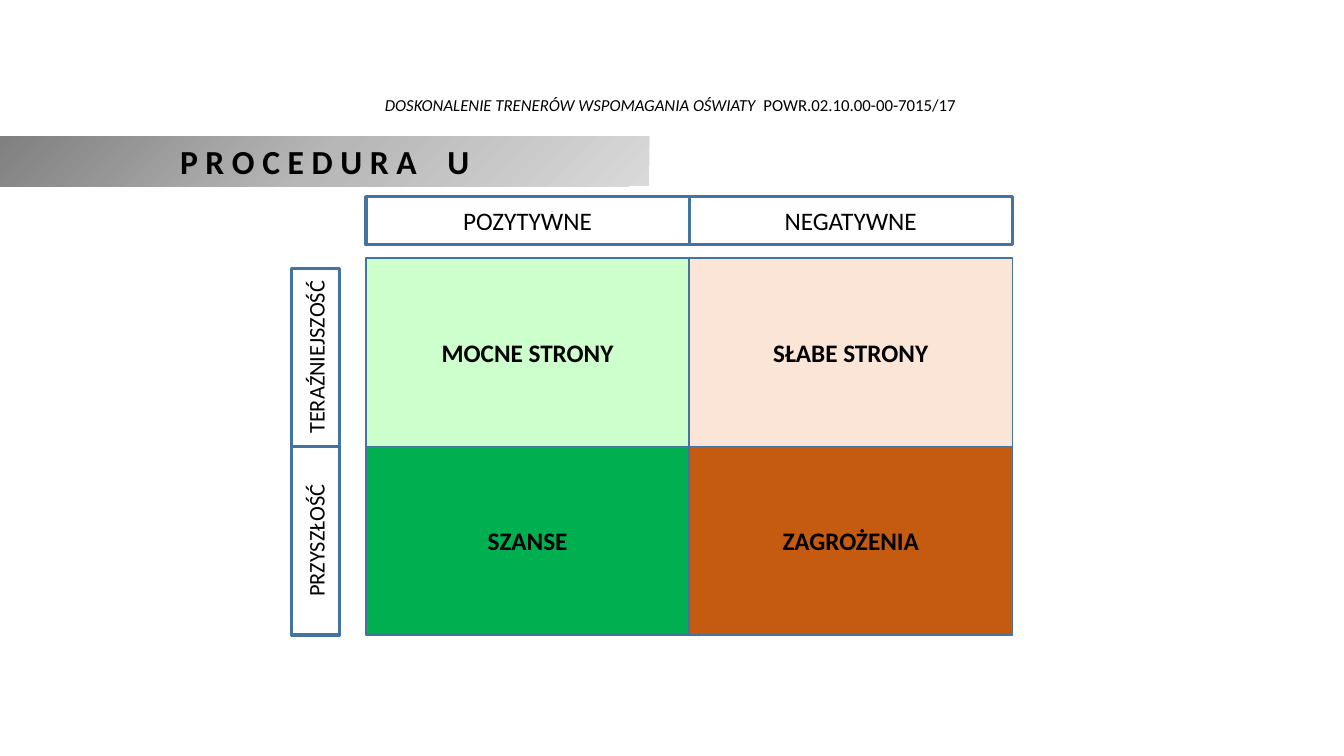
"""Build the SWOT matrix slide."""
import lxml.etree
import pptx
import pptx.dml.color
import pptx.enum.shapes
import pptx.enum.text
import pptx.oxml.ns
import pptx.util

Inches = pptx.util.Inches
Pt = pptx.util.Pt
RGB = pptx.dml.color.RGBColor
BLACK = RGB(0, 0, 0)
WHITE = RGB(255, 255, 255)
BLUE = RGB(0x43, 0x73, 0x9E)
MINT = RGB(0xCC, 0xFF, 0xCC)
GREEN = RGB(0x00, 0xB0, 0x50)
PEACH = RGB(0xFB, 0xE5, 0xD6)
RUST = RGB(0xC5, 0x5A, 0x11)
GRAYS = ((0, RGB(0x80, 0x80, 0x80)), (50, RGB(0xB7, 0xB7, 0xB7)),
         (100, RGB(0xD9, 0xD9, 0xD9)))


def style(para, size, bold=None):
    """Centre a paragraph and set its font."""
    para.alignment = pptx.enum.text.PP_ALIGN.CENTER
    para.font.name = "Calibri"
    para.font.size = Pt(size)
    para.font.bold = bold
    para.font.color.rgb = BLACK


def split(para, left, right, gap):
    """Add two runs parted by a space widened by gap points."""
    runs = []
    for text in (left, " ", right):
        run = para.add_run()
        run.text = text
        runs.append(run)
    runs[1].font._element.set("spc", str(round(gap * 100)))
    return runs


def block(slide, box):
    """Add a plain rectangle with its text in the middle."""
    shape = slide.shapes.add_shape(
        pptx.enum.shapes.MSO_SHAPE.RECTANGLE, *map(Inches, box))
    shape.shadow.inherit = False
    shape.text_frame.vertical_anchor = pptx.enum.text.MSO_ANCHOR.MIDDLE
    return shape


def cell(slide, box, text, fill, size=18, line=2.25, bold=None):
    """Add an outlined cell with one label."""
    shape = block(slide, box)
    shape.fill.solid()
    shape.fill.fore_color.rgb = fill
    shape.line.color.rgb = BLUE
    shape.line.width = Pt(line)
    para = shape.text_frame.paragraphs[0]
    para.text = text
    style(para, size, bold)
    return shape


def side(slide, box, text):
    """Add a cell that fills the box with text reading upwards."""
    left, top, wide, high = box
    shift = (high - wide) / 2
    turned = (left - shift, top + shift, high, wide)
    cell(slide, turned, text, WHITE, 16).rotation = 270


def header(slide, box):
    """Add the project line."""
    frame = slide.shapes.add_textbox(*map(Inches, box)).text_frame
    frame.word_wrap = True
    frame.vertical_anchor = pptx.enum.text.MSO_ANCHOR.MIDDLE
    para = frame.paragraphs[0]
    style(para, 12)
    runs = split(para, "DOSKONALENIE TRENERÓW WSPOMAGANIA OŚWIATY",
                 "POWR.02.10.00-00-7015/17", 2.7)
    runs[0].font.italic = True


def banner(slide, box):
    """Add the title on a band shaded from its top left corner."""
    shape = block(slide, box)
    shape.line.fill.background()
    shape.fill.gradient()
    grad = shape._element.spPr.find(pptx.oxml.ns.qn("a:gradFill"))
    for child in list(grad):
        grad.remove(child)

    def add(parent, tag, **attrs):
        return lxml.etree.SubElement(parent, pptx.oxml.ns.qn(tag), attrs)

    stops = add(grad, "a:gsLst")
    for spot, color in GRAYS:
        stop = add(stops, "a:gs", pos=str(spot * 1000))
        add(stop, "a:srgbClr", val=str(color))
    shade = add(grad, "a:path", path="circle")
    add(shade, "a:fillToRect", r="100000", b="100000")
    para = shape.text_frame.paragraphs[0]
    style(para, 24, True)
    split(para, "P R O C E D U R A", "U", 16.3)


def matrix(slide, box):
    """Add the two by two matrix with its column and row heads."""
    left, top, wide, high = box
    wide, high = wide / 2, high / 2
    columns = (("POZYTYWNE", ("MOCNE STRONY", MINT), ("SZANSE", GREEN)),
               ("NEGATYWNE", ("SŁABE STRONY", PEACH), ("ZAGROŻENIA", RUST)))
    for col, (head, *cells) in enumerate(columns):
        x = left + col * wide
        for row, (text, fill) in enumerate(cells):
            place = (x, top + row * high, wide, high)
            cell(slide, place, text, fill, line=1, bold=True)
        cell(slide, (x, top - 0.61, wide, 0.48), head, WHITE)
    x = left - 0.74
    side(slide, (x, top + 0.1, 0.48, high - 0.1), "TERAŹNIEJSZOŚĆ")
    side(slide, (x, top + high, 0.48, high), "PRZYSZŁOŚĆ")


def main():
    """Build and save the slide."""
    deck = pptx.Presentation()
    deck.slide_width, deck.slide_height = Inches(13.33), Inches(7.5)
    slide = deck.slides.add_slide(deck.slide_layouts[6])
    header(slide, (0.92, 0.88, 11.46, 0.32))
    matrix(slide, (3.63, 2.56, 6.41, 3.74))
    banner(slide, (0, 1.35, 6.44, 0.5))
    deck.save("out.pptx")


if __name__ == "__main__":
    main()
